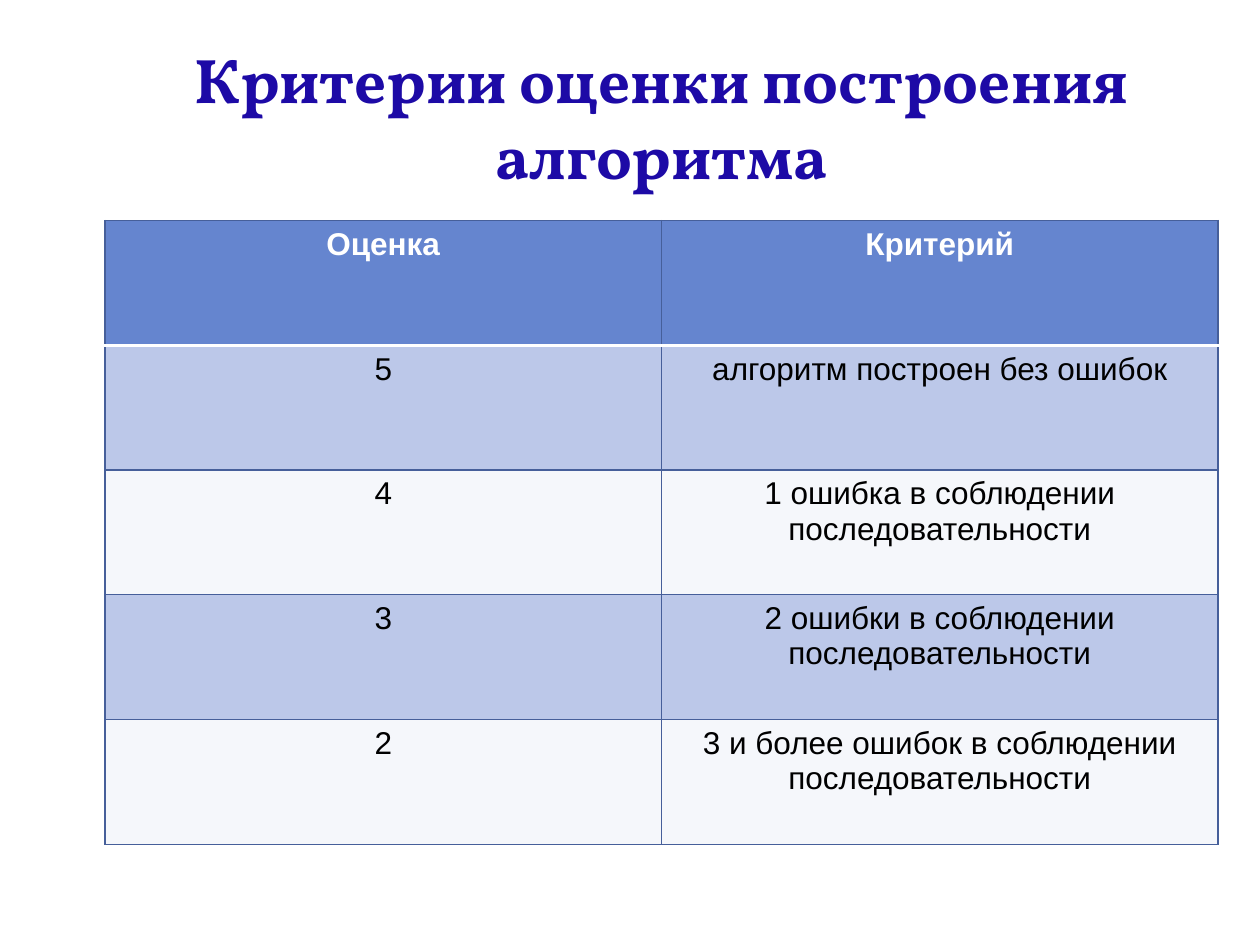
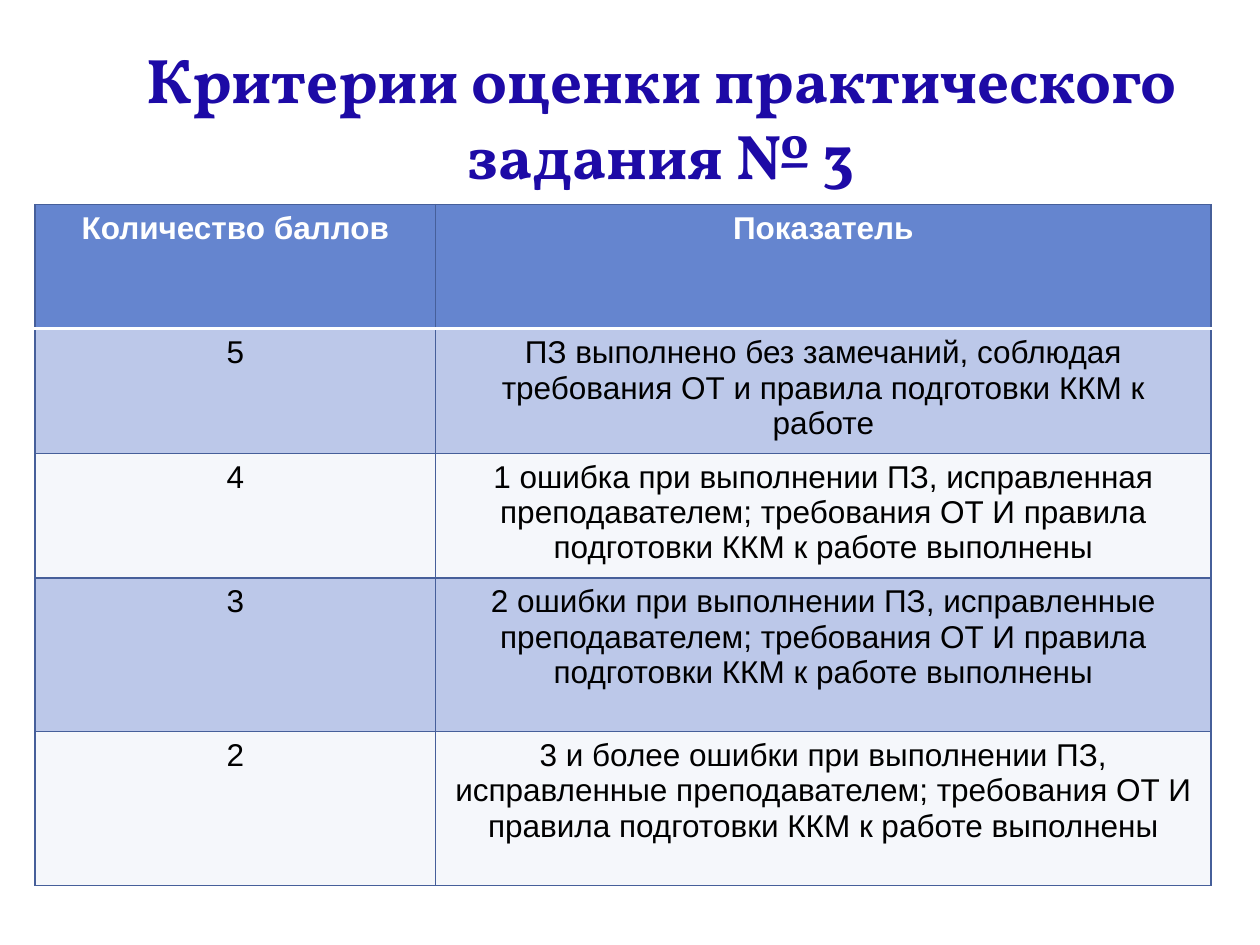
from dataclasses import dataclass

from lxml import etree
from pptx import Presentation
from pptx.dml.color import RGBColor
from pptx.enum.text import MSO_ANCHOR, PP_ALIGN
from pptx.oxml.ns import qn
from pptx.util import Pt

CENTER = PP_ALIGN.CENTER
MIDDLE = MSO_ANCHOR.MIDDLE
TITLE_ONLY = 5

COLORS = {
    "title": "1D0AA6",
    "header": "6585CF",
    "band": "BCC8E9",
    "plain": "F5F7FB",
    "border": "465F9A",
    "white": "FFFFFF",
    "black": "000000",
}
TITLE_BOX = {"left": Pt(60), "top": Pt(21.6), "width": Pt(636), "height": Pt(90)}
TITLE_FONT = {"name": "Vollkorn", "size": Pt(36), "bold": True}
HEADER_FONT = {"name": "Arial", "size": Pt(18), "bold": True}
BODY_FONT = {"name": "Arial", "size": Pt(18), "bold": False}


@dataclass
class CriteriaPage:
    title: str
    left: float
    top: float
    column_widths: list[float]
    row_heights: list[float]
    rows: list[tuple[str, str]]


PAGES = [
    CriteriaPage(
        "Критерии оценки построения алгоритма",
        60, 126, [318, 318], [71.3] * 5,
        [
            ("Оценка", "Критерий"),
            ("5", "алгоритм построен без ошибок"),
            ("4", "1 ошибка в соблюдении последовательности"),
            ("3", "2 ошибки в соблюдении последовательности"),
            ("2", "3 и более ошибок в соблюдении последовательности"),
        ],
    ),
    CriteriaPage(
        "Критерии оценки практического задания № 3",
        20, 116.8, [229, 443], [71.2] * 3 + [87.8] * 2,
        [
            ("Количество баллов", "Показатель"),
            ("5", "ПЗ выполнено без замечаний, соблюдая требования ОТ и правила "
                  "подготовки ККМ к работе"),
            ("4", "1 ошибка при выполнении ПЗ, исправленная преподавателем; "
                  "требования ОТ И правила подготовки ККМ к работе выполнены"),
            ("3", "2 ошибки при выполнении ПЗ, исправленные преподавателем; "
                  "требования ОТ И правила подготовки ККМ к работе выполнены"),
            ("2", "3 и более ошибки при выполнении ПЗ, исправленные преподавателем; "
                  "требования ОТ И правила подготовки ККМ к работе выполнены"),
        ],
    ),
]


def set_attributes(target, values: dict) -> None:
    for name, value in values.items():
        setattr(target, name, value)


def write_text(frame, text: str, font: dict, color: str) -> None:
    frame.text = text
    paragraph = frame.paragraphs[0]
    paragraph.alignment = CENTER
    span = paragraph.runs[0]
    set_attributes(span.font, font)
    span.font.color.rgb = RGBColor.from_string(COLORS[color])


def set_borders(cell, sides: dict[str, tuple[str, float]]) -> None:
    """Border lines must come before the fill, in the order left, right, top, bottom."""
    properties = cell._tc.get_or_add_tcPr()
    for index, (side, (color, width)) in enumerate(sides.items()):
        line = etree.Element(qn(f"a:ln{side}"), w=str(Pt(width)))
        fill = etree.SubElement(line, qn("a:solidFill"))
        etree.SubElement(fill, qn("a:srgbClr"), val=COLORS[color])
        properties.insert(index, line)


def add_title(page, text: str) -> None:
    title = page.shapes.title
    set_attributes(title, TITLE_BOX)
    title.text_frame.vertical_anchor = MIDDLE
    write_text(title.text_frame, text, TITLE_FONT, "title")


def add_criteria_table(page, content: CriteriaPage) -> None:
    table = page.shapes.add_table(
        len(content.rows), len(content.column_widths),
        Pt(content.left), Pt(content.top),
        Pt(sum(content.column_widths)), Pt(sum(content.row_heights)),
    ).table
    for column, width in zip(table.columns, content.column_widths):
        column.width = Pt(width)
    for row, height in zip(table.rows, content.row_heights):
        row.height = Pt(height)

    thin, thick = ("border", 0.75), ("white", 2)
    for row_index, texts in enumerate(content.rows):
        is_header = row_index == 0
        fill = "header" if is_header else "band" if row_index % 2 else "plain"
        for column_index, text in enumerate(texts):
            cell = table.cell(row_index, column_index)
            write_text(cell.text_frame, text,
                       HEADER_FONT if is_header else BODY_FONT,
                       "white" if is_header else "black")
            cell.fill.solid()
            cell.fill.fore_color.rgb = RGBColor.from_string(COLORS[fill])
            set_borders(cell, {
                "L": thin,
                "R": thin,
                "T": thick if row_index == 1 else thin,
                "B": thick if is_header else thin,
            })


def main() -> None:
    deck = Presentation()
    deck.slide_width, deck.slide_height = Pt(720), Pt(540)
    for content in PAGES:
        page = deck.slides.add_slide(deck.slide_layouts[TITLE_ONLY])
        add_title(page, content.title)
        add_criteria_table(page, content)
    deck.save("out.pptx")


if __name__ == "__main__":
    main()
